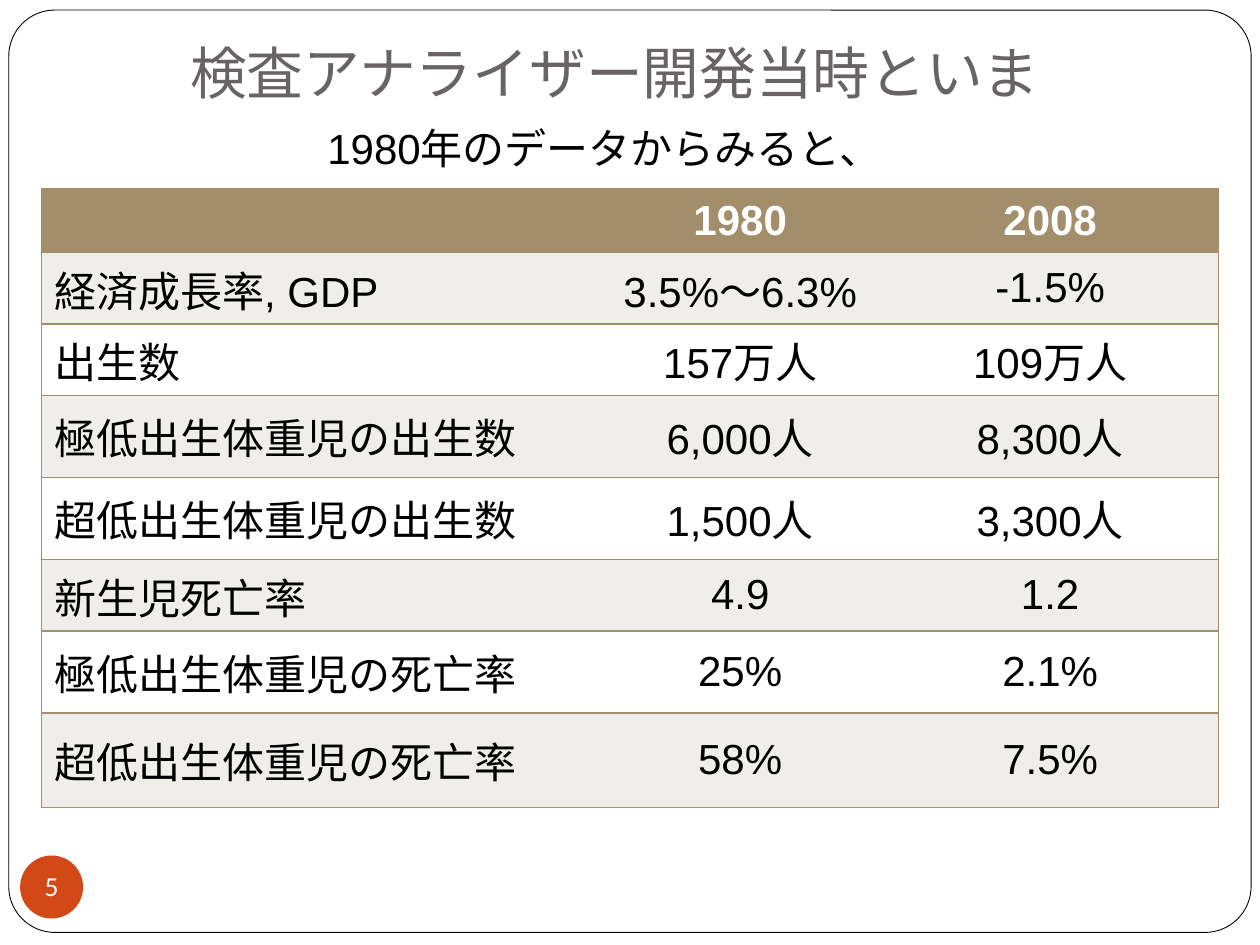
"""Build a slide comparing Japanese birth statistics of 1980 and 2008 in a table."""
from dataclasses import dataclass

from lxml.etree import fromstring
from pptx import Presentation
from pptx.dml.color import RGBColor
from pptx.enum.shapes import MSO_SHAPE
from pptx.enum.text import MSO_ANCHOR, MSO_AUTO_SIZE, PP_ALIGN
from pptx.util import Inches, Pt


@dataclass(frozen=True)
class Theme:
    font: str = "Arial"
    number_font: str = "Lato"
    title_size: float = 32.4
    body_size: float = 24
    number_size: float = 14
    black: str = "000000"
    white: str = "FFFFFF"
    gray: str = "696464"
    orange: str = "D34817"
    tan: str = "A28E6A"
    band: str = "F0EEEB"


theme = Theme()


def write(frame, text, size=theme.body_size, color=theme.black, font=theme.font,
          bold=False, align=PP_ALIGN.LEFT, anchor=MSO_ANCHOR.MIDDLE):
    frame.vertical_anchor = anchor
    para = frame.paragraphs[0]
    para.alignment = align
    span = para.add_run()
    span.text = text
    span.font.size = Pt(size)
    span.font.name = font
    span.font.bold = bold
    span.font.color.rgb = RGBColor.from_string(color)


def set_borders(cell, visible):
    properties = cell._tc.get_or_add_tcPr()
    for position, side in enumerate("LRTB"):
        paint = (f'<a:solidFill><a:srgbClr val="{theme.tan}"/></a:solidFill>'
                 if side in visible else "<a:noFill/>")
        properties.insert(position, fromstring(
            f'<a:ln{side} xmlns:a="http://schemas.openxmlformats.org/drawingml/2006/main" '
            f'w="{Pt(1)}">{paint}</a:ln{side}>'))


deck = Presentation()
deck.slide_width = Inches(10)
deck.slide_height = Inches(7.5)
page = deck.slides.add_slide(deck.slide_layouts[6])

border = page.shapes.add_shape(MSO_SHAPE.ROUNDED_RECTANGLE, Inches(0.07), Inches(0.08),
                               Inches(9.86), Inches(7.32))
border.adjustments[0] = 0.05
border.shadow.inherit = False
border.fill.solid()
border.fill.fore_color.rgb = RGBColor.from_string(theme.white)
border.line.color.rgb = RGBColor.from_string(theme.black)
border.line.width = Pt(0.5)

title = page.shapes.add_textbox(Inches(0.67), Inches(0.22), Inches(8.42), Inches(0.75))
title.text_frame.word_wrap = True
title.text_frame.margin_bottom = Inches(0.1)
write(title.text_frame, "検査アナライザー開発当時といま", size=theme.title_size,
      color=theme.gray, align=PP_ALIGN.CENTER)

badge = page.shapes.add_shape(MSO_SHAPE.OVAL, Inches(0.16), Inches(6.79),
                              Inches(0.5), Inches(0.5))
badge.shadow.inherit = False
badge.fill.solid()
badge.fill.fore_color.rgb = RGBColor.from_string(theme.orange)
badge.line.fill.background()
frame = badge.text_frame
frame.word_wrap = False
frame.margin_left = frame.margin_right = frame.margin_top = frame.margin_bottom = 0
write(frame, "5", size=theme.number_size, color=theme.white,
      font=theme.number_font, align=PP_ALIGN.CENTER)

subtitle = page.shapes.add_textbox(Inches(2.5), Inches(0.92), Inches(4.75), Inches(0.5))
subtitle.text_frame.word_wrap = False
subtitle.text_frame.auto_size = MSO_AUTO_SIZE.SHAPE_TO_FIT_TEXT
write(subtitle.text_frame, "1980年のデータからみると、", anchor=MSO_ANCHOR.TOP)

rows = [
    (0.5, "", "1980", "2008"),
    (0.57, "経済成長率, GDP", "3.5%～6.3%", "-1.5%"),
    (0.57, "出生数", "157万人", "109万人"),
    (0.65, "極低出生体重児の出生数", "6,000人", "8,300人"),
    (0.65, "超低出生体重児の出生数", "1,500人", "3,300人"),
    (0.57, "新生児死亡率", "4.9", "1.2"),
    (0.65, "極低出生体重児の死亡率", "25%", "2.1%"),
    (0.75, "超低出生体重児の死亡率", "58%", "7.5%"),
]
widths = [4.42, 2.25, 2.67]
table = page.shapes.add_table(len(rows), len(widths), Inches(0.33), Inches(1.5),
                              Inches(sum(widths)), Inches(sum(row[0] for row in rows))).table
for column, width in zip(table.columns, widths):
    column.width = Inches(width)

for row_index, (height, *texts) in enumerate(rows):
    table.rows[row_index].height = Inches(height)
    header = row_index == 0
    fill = theme.tan if header else theme.band if row_index % 2 else theme.white
    for column_index, text in enumerate(texts):
        cell = table.cell(row_index, column_index)
        set_borders(cell, ("LTB", "TB", "RTB")[column_index])
        cell.fill.solid()
        cell.fill.fore_color.rgb = RGBColor.from_string(fill)
        cell.vertical_anchor = MSO_ANCHOR.MIDDLE
        if text:
            write(cell.text_frame, text, color=theme.white if header else theme.black,
                  bold=header, align=PP_ALIGN.CENTER if column_index else PP_ALIGN.LEFT)

deck.save("out.pptx")
